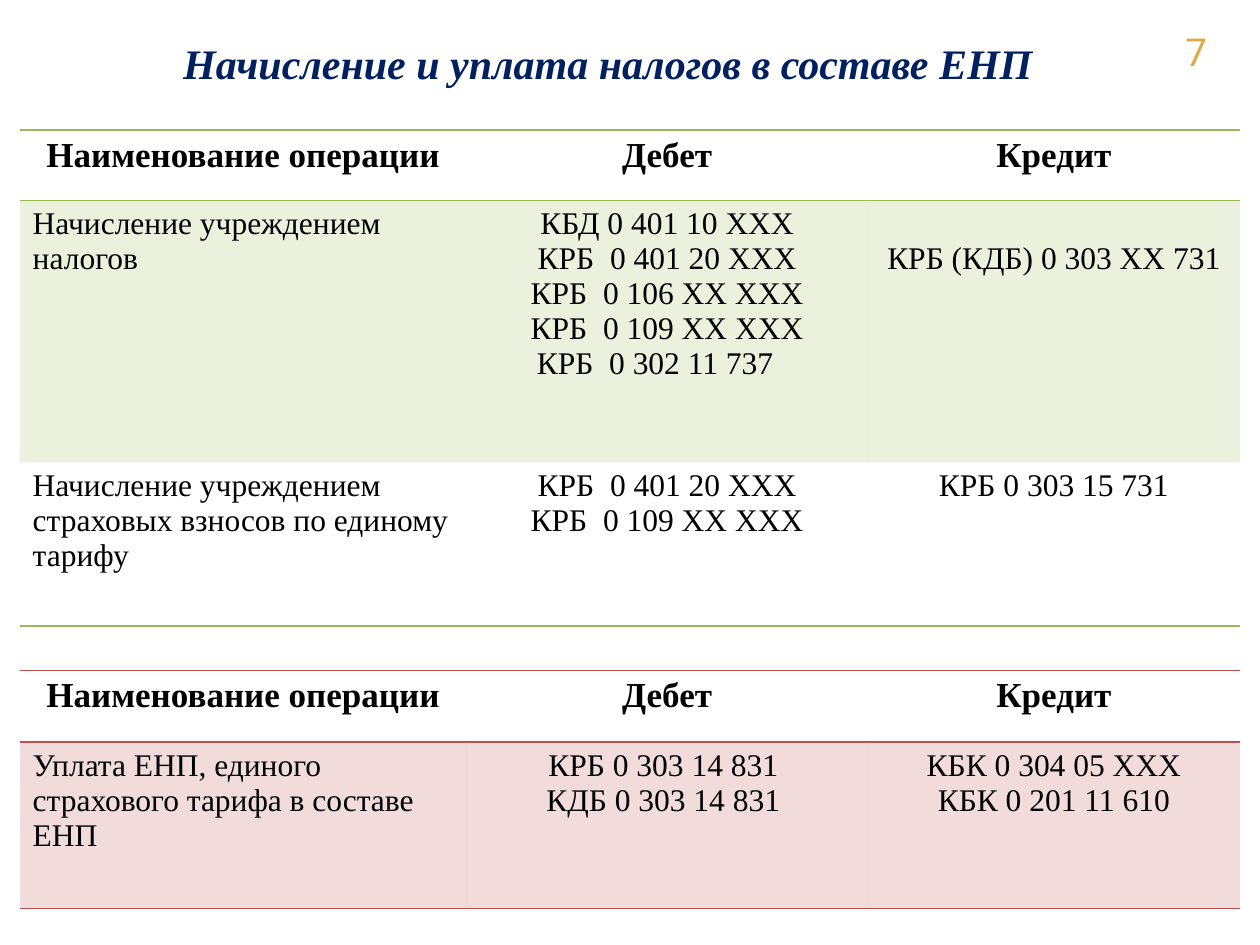
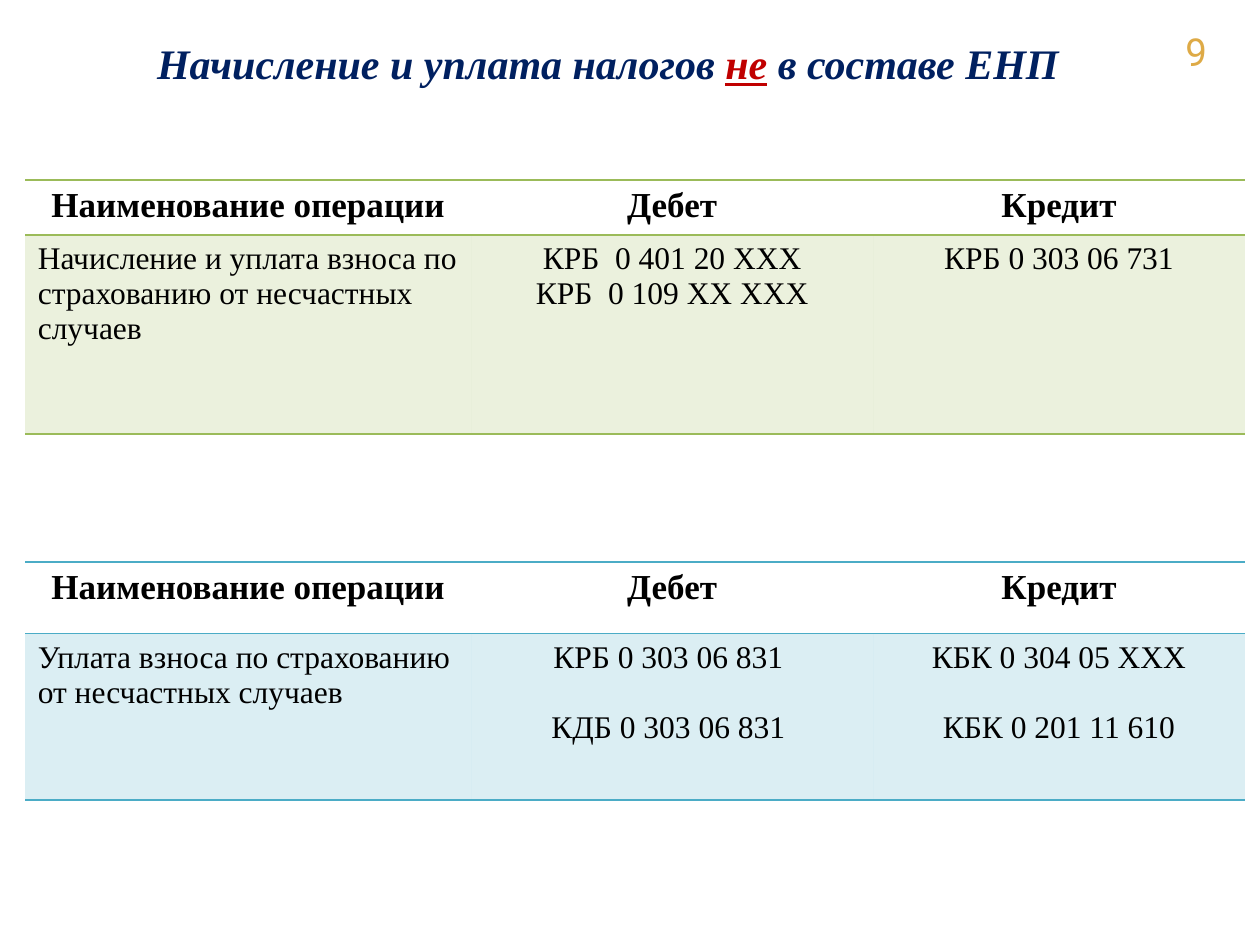
from dataclasses import dataclass
from typing import NamedTuple

from lxml.etree import SubElement
from pptx import Presentation
from pptx.dml.color import RGBColor
from pptx.enum.text import MSO_ANCHOR as Anchor, MSO_AUTO_SIZE as AutoSize, PP_ALIGN as Align
from pptx.oxml import parse_xml
from pptx.oxml.ns import nsdecls, qn
from pptx.util import Inches, Pt

COLORS = {
    "navy": "002060",
    "red": "C00000",
    "gold": "DEAA46",
    "black": "000000",
    "green": "9BBB59",
    "rose": "C0504D",
    "teal": "4BACC6",
}
SERIF, SANS = "Times New Roman", "Roboto"
NO_STYLE_NO_GRID = "{2D5ABB26-0587-4C30-8999-92F81FD0307C}"

# The slide is a grid of 100 columns by 75 rows.
GRID_COLUMNS, GRID_ROWS = 100, 75
UNIT = Inches(0.1)
TITLE_AREA = (7.1, 2.5, 82.3, 5)
NUMBER_AREA = (93.1, 1.1, 9.3, 5.9)
TABLE_COLUMNS = (35.4, 31.9, 29.5)
HEADINGS = ("Наименование операции", "Дебет", "Кредит")
TINT_PERCENT = 20
BODY_LINE = Pt(20)


class Span(NamedTuple):
    text: str
    color: str = "navy"
    underline: bool = False


class Line(NamedTuple):
    text: str
    skip_before: bool = False
    right_indent: float = 0


@dataclass(frozen=True)
class Operation:
    name: str
    debit: tuple[Line, ...]
    credit: tuple[Line, ...]
    height: float


@dataclass(frozen=True)
class EntryTable:
    left: float
    top: float
    accent: str
    heading_height: float
    operations: tuple[Operation, ...]


@dataclass(frozen=True)
class Page:
    number: str
    title: tuple[Span, ...]
    tables: tuple[EntryTable, ...]


def units(value: float) -> int:
    return round(value * UNIT)


def rgb(name: str) -> RGBColor:
    return RGBColor.from_string(COLORS[name])


def place(box, area: tuple[float, ...]) -> None:
    box.left, box.top, box.width, box.height = map(units, area)


def set_font(para, face: str, size: float, color: str, bold: bool = False) -> None:
    font = para.font
    font.name, font.size, font.bold = face, Pt(size), bold
    font.color.rgb = rgb(color)


def add_title(slide, spans: tuple[Span, ...]) -> None:
    box = slide.shapes.title
    place(box, TITLE_AREA)
    frame = box.text_frame
    frame.word_wrap, frame.auto_size = True, AutoSize.NONE
    frame.vertical_anchor = Anchor.TOP
    para = frame.paragraphs[0]
    para.alignment = Align.CENTER
    set_font(para, SERIF, 24, "navy", bold=True)
    para.font.italic = True
    for span in spans:
        run = para.add_run()
        run.text = span.text
        run.font.color.rgb = rgb(span.color)
        run.font.underline = span.underline


def add_number(slide, number: str) -> None:
    box = slide.shapes.add_textbox(*map(units, NUMBER_AREA))
    frame = box.text_frame
    frame.word_wrap, frame.vertical_anchor = True, Anchor.MIDDLE
    para = frame.paragraphs[0]
    para.text = number
    set_font(para, SANS, 22, "gold")


def add_rule(cell, edge: str, accent: str) -> None:
    """Draw a thin line on the top ("lnT") or bottom ("lnB") edge of a cell."""
    properties = cell._tc.get_or_add_tcPr()
    rule = parse_xml(
        f'<a:{edge} {nsdecls("a")} w="{Pt(1)}"><a:solidFill>'
        f'<a:srgbClr val="{COLORS[accent]}"/></a:solidFill></a:{edge}>'
    )
    properties.insert(0 if edge == "lnT" else len(properties.findall(qn("a:lnT"))), rule)


def tint(cell, accent: str) -> None:
    cell.fill.solid()
    cell.fill.fore_color.rgb = rgb(accent)
    color = cell._tc.tcPr.find(f"{qn('a:solidFill')}/{qn('a:srgbClr')}")
    SubElement(color, qn("a:alpha"), val=str(TINT_PERCENT * 1000))


def write_lines(cell, lines: tuple[Line, ...], size: float, align: Align, bold: bool) -> None:
    frame = cell.text_frame
    for index, line in enumerate(lines):
        para = frame.add_paragraph() if index else frame.paragraphs[0]
        para.text, para.alignment = line.text, align
        set_font(para, SERIF, size, "black", bold)
        if line.skip_before and index:
            para.space_before = BODY_LINE
        elif line.skip_before:
            cell.margin_top = Inches(0.05) + BODY_LINE
        if line.right_indent:
            para._p.get_or_add_pPr().set("marR", str(units(line.right_indent)))


def add_entry_table(slide, entry: EntryTable) -> None:
    heights = [entry.heading_height, *(item.height for item in entry.operations)]
    area = (entry.left, entry.top, sum(TABLE_COLUMNS), sum(heights))
    table = slide.shapes.add_table(
        len(heights), len(TABLE_COLUMNS), *map(units, area)
    ).table
    table._tbl.tblPr.find(qn("a:tableStyleId")).text = NO_STYLE_NO_GRID
    table.horz_banding = False
    for column, width in zip(table.columns, TABLE_COLUMNS):
        column.width = units(width)
    for row, height in zip(table.rows, heights):
        row.height = units(height)

    contents = [tuple((Line(text),) for text in HEADINGS)]
    contents += [((Line(item.name),), item.debit, item.credit) for item in entry.operations]
    last = len(contents) - 1
    for row_index, row_lines in enumerate(contents):
        heading = row_index == 0
        for column_index, lines in enumerate(row_lines):
            cell = table.cell(row_index, column_index)
            align = Align.CENTER if heading or column_index else Align.LEFT
            write_lines(cell, lines, 20 if heading else 18, align, heading)
            if row_index % 2:
                tint(cell, entry.accent)
            else:
                cell.fill.background()
            if heading:
                add_rule(cell, "lnT", entry.accent)
            if heading or row_index == last:
                add_rule(cell, "lnB", entry.accent)


INSURANCE_DEBIT = (Line("КРБ  0 401 20 ХХХ"), Line("КРБ  0 109 ХХ ХХХ"))

PAGES = (
    Page("7", (Span("Начисление и уплата налогов в составе ЕНП"),), (
        EntryTable(1.6, 10.3, "green", 5.6, (
            Operation(
                "Начисление учреждением налогов",
                (
                    Line("КБД 0 401 10 ХХХ"),
                    Line("КРБ  0 401 20 ХХХ"),
                    Line("КРБ  0 106 ХХ ХХХ"),
                    Line("КРБ  0 109 ХХ ХХХ"),
                    Line("КРБ  0 302 11 737", right_indent=1.9),
                ),
                (Line("КРБ (КДБ) 0 303 ХХ 731", skip_before=True),),
                20.8,
            ),
            Operation(
                "Начисление учреждением страховых взносов по единому тарифу",
                INSURANCE_DEBIT,
                (Line("КРБ 0 303 15 731"),),
                13,
            ),
        )),
        EntryTable(1.6, 53.2, "rose", 5.7, (
            Operation(
                "Уплата ЕНП, единого страхового тарифа в составе ЕНП",
                (Line("КРБ 0 303 14 831", right_indent=0.6), Line("КДБ 0 303 14 831")),
                (Line("КБК 0 304 05 ХХХ"), Line("КБК 0 201 11 610")),
                13.2,
            ),
        )),
    )),
    Page("9", (
        Span("Начисление и уплата налогов "),
        Span("не", "red", underline=True),
        Span(" в составе ЕНП"),
    ), (
        EntryTable(2, 14.3, "green", 4.1, (
            Operation(
                "Начисление и уплата взноса по страхованию от несчастных случаев",
                INSURANCE_DEBIT,
                (Line("КРБ 0 303 06 731"),),
                15.8,
            ),
        )),
        EntryTable(2, 44.6, "teal", 5.7, (
            Operation(
                "Уплата взноса по страхованию от несчастных случаев",
                (
                    Line("КРБ 0 303 06 831", right_indent=0.6),
                    Line("КДБ 0 303 06 831", skip_before=True),
                ),
                (Line("КБК 0 304 05 ХХХ"), Line("КБК 0 201 11 610", skip_before=True)),
                13.2,
            ),
        )),
    )),
)


def main() -> None:
    deck = Presentation()
    deck.slide_width, deck.slide_height = units(GRID_COLUMNS), units(GRID_ROWS)
    title_only = deck.slide_layouts.get_by_name("Title Only")
    for page in PAGES:
        slide = deck.slides.add_slide(title_only)
        add_number(slide, page.number)
        add_title(slide, page.title)
        for entry in page.tables:
            add_entry_table(slide, entry)
    deck.save("out.pptx")


if __name__ == "__main__":
    main()
